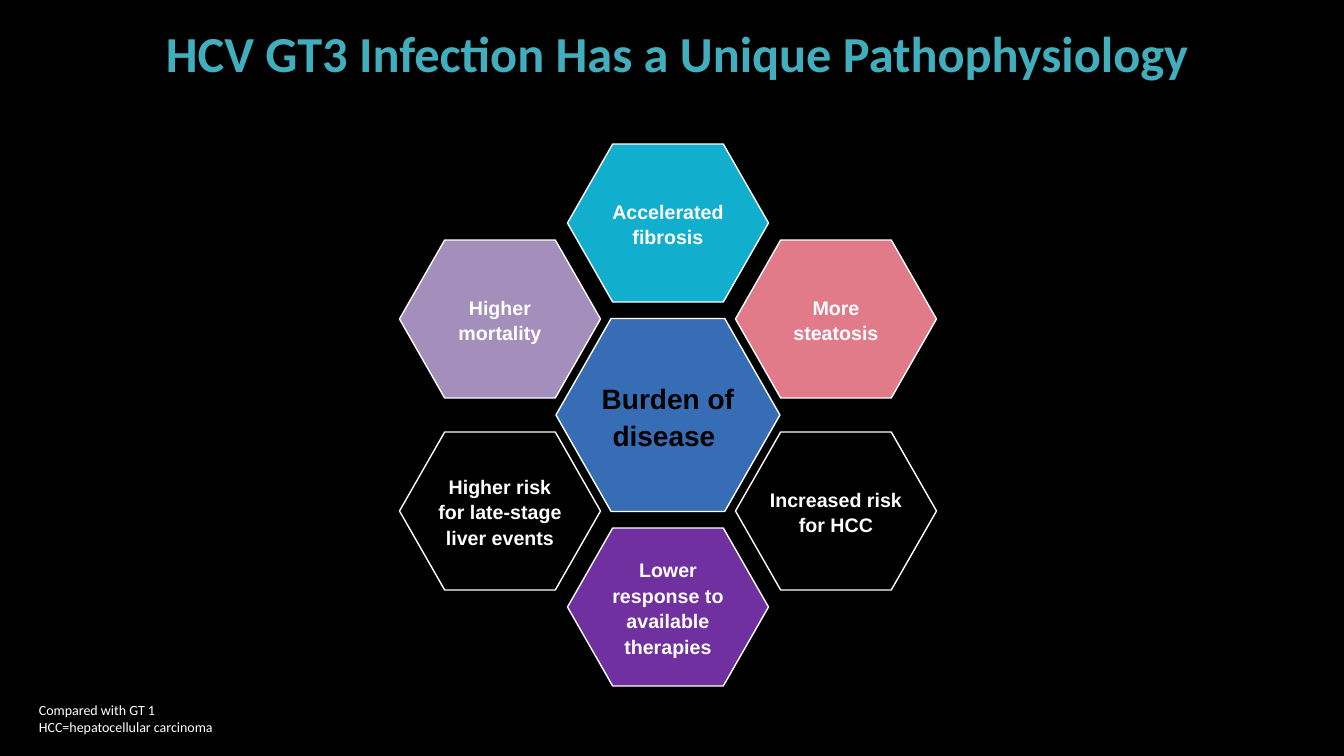
"""Build the slide on the pathophysiology of HCV GT3 infection."""
from dataclasses import dataclass

from pptx import Presentation
from pptx.dml.color import RGBColor
from pptx.enum.shapes import MSO_SHAPE as Preset
from pptx.enum.text import MSO_ANCHOR as Anchor, PP_ALIGN as Align
from pptx.util import Pt

HEADLINE = "HCV GT3 Infection Has a Unique Pathophysiology"
FOOTNOTES = ["Compared with GT 1", "HCC=hepatocellular carcinoma"]
BURDEN = "Burden of disease "
CONSEQUENCES = [
    ("Accelerated fibrosis", "11AECD", (0, -2)),
    ("More steatosis", "E17B8A", (1, -1)),
    ("Increased risk for HCC", "000000", (1, 1)),
    ("Lower response to available therapies", "7030A0", (0, 2)),
    ("Higher risk for late-stage liver events", "000000", (-1, 1)),
    ("Higher mortality", "A38EBC", (-1, -1)),
]


@dataclass(frozen=True)
class Theme:
    background: str = "000000"
    headline: str = "41AEBD"
    light: str = "FFFFFF"
    dark: str = "000000"
    burden: str = "366DB5"
    heading_font: str = "Calibri"
    cell_font: str = "Arial"
    headline_size: int = 36
    burden_size: int = 20
    consequence_size: int = 14
    footnote_size: int = 10


THEME = Theme()
SLIDE = (1344, 756)
HEADLINE_BOX = (29, 17, 1297, 134)
FOOTNOTE_BOX = (29, 696, 1142, 44)
CENTER = (668, 415)
BURDEN_SIZE = (224, 193)
CONSEQUENCE_SIZE = (201, 158)
RING_STEP = (168, 96)
CELL_INSET = 2


def px(length):
    return round(length * 914400 / 100.8)


def color(code):
    return RGBColor.from_string(code)


def write(frame, lines, font_name, size, ink, bold=False, align=Align.LEFT, spacing=1.0):
    frame.word_wrap = True
    frame.text = "\n".join(lines)
    for paragraph in frame.paragraphs:
        paragraph.alignment = align
        paragraph.line_spacing = spacing
        for run in paragraph.runs:
            run.font.name = font_name
            run.font.size = Pt(size)
            run.font.bold = bold
            run.font.color.rgb = color(ink)


def add_label(slide, box, lines, size, ink, anchor, **style):
    frame = slide.shapes.add_textbox(*map(px, box)).text_frame
    frame.vertical_anchor = anchor
    write(frame, lines, THEME.heading_font, size, ink, **style)


def add_cell(slide, center, extent, label, fill, size, ink):
    corner = [middle - side / 2 for middle, side in zip(center, extent)]
    cell = slide.shapes.add_shape(Preset.HEXAGON, *map(px, (*corner, *extent)))
    cell.adjustments[0] = 0.286
    cell.adjustments[1] = 1.1547
    cell.shadow.inherit = False
    cell.fill.solid()
    cell.fill.fore_color.rgb = color(fill)
    cell.line.color.rgb = color(THEME.light)
    cell.line.width = Pt(1)
    frame = cell.text_frame
    frame.vertical_anchor = Anchor.MIDDLE
    frame.margin_left = frame.margin_right = px(CELL_INSET)
    frame.margin_top = frame.margin_bottom = px(CELL_INSET)
    write(frame, [label], THEME.cell_font, size, ink, True, Align.CENTER, 1.1)


def main():
    deck = Presentation()
    deck.slide_width, deck.slide_height = map(px, SLIDE)
    slide = deck.slides.add_slide(deck.slide_layouts[6])
    slide.background.fill.solid()
    slide.background.fill.fore_color.rgb = color(THEME.background)

    add_label(slide, HEADLINE_BOX, [HEADLINE], THEME.headline_size, THEME.headline,
              Anchor.TOP, bold=True, align=Align.CENTER)
    add_cell(slide, CENTER, BURDEN_SIZE, BURDEN, THEME.burden,
             THEME.burden_size, THEME.dark)
    for consequence, fill, place in CONSEQUENCES:
        center = [middle + step * count
                  for middle, step, count in zip(CENTER, RING_STEP, place)]
        add_cell(slide, center, CONSEQUENCE_SIZE, consequence, fill,
                 THEME.consequence_size, THEME.light)
    add_label(slide, FOOTNOTE_BOX, FOOTNOTES, THEME.footnote_size, THEME.light,
              Anchor.BOTTOM)
    deck.save("out.pptx")


if __name__ == "__main__":
    main()
